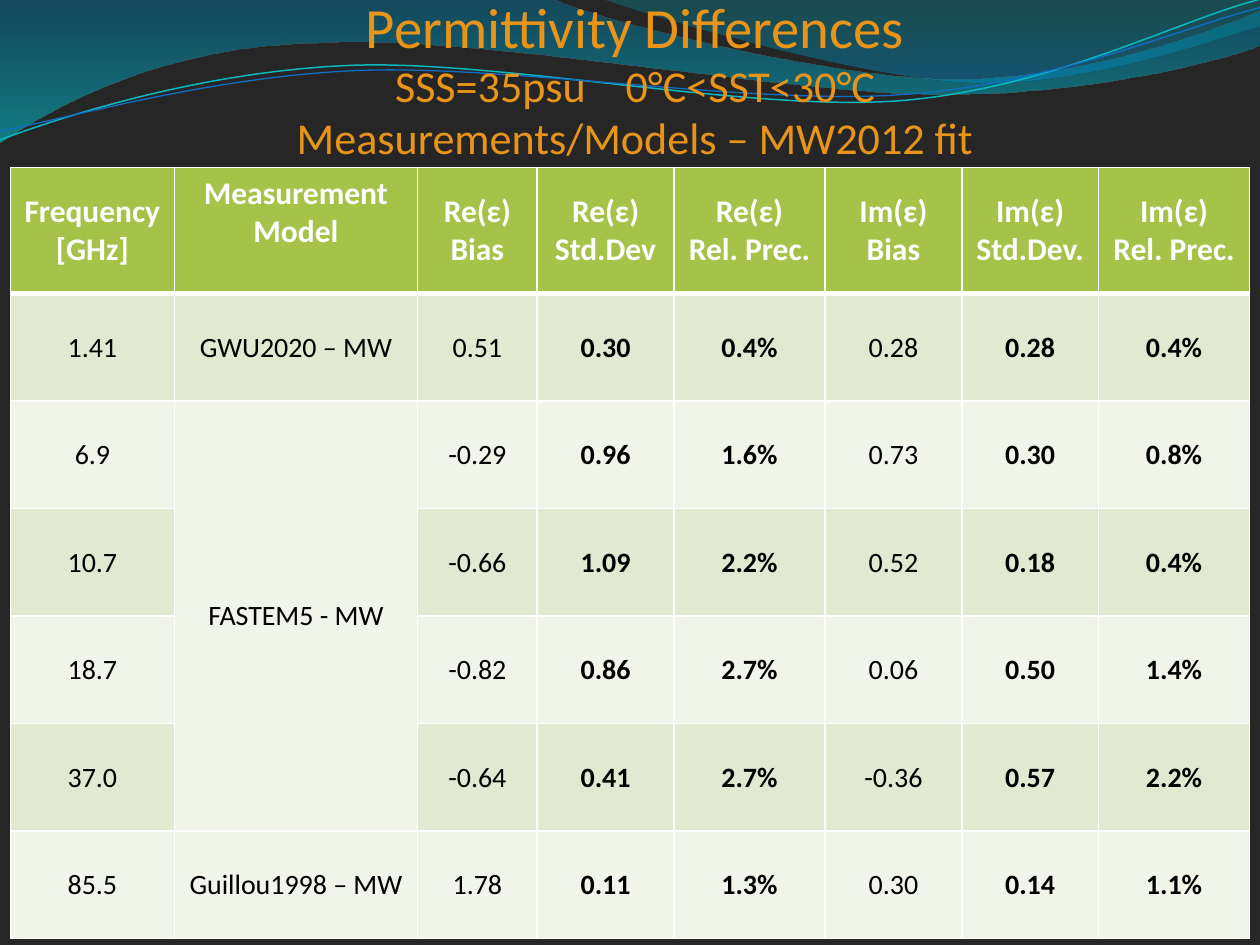
from lxml.etree import SubElement
from pptx import Presentation
from pptx.dml.color import RGBColor
from pptx.enum.text import MSO_ANCHOR, PP_ALIGN
from pptx.oxml.ns import qn
from pptx.util import Pt

# Each segment holds one point for a straight line or three for a cubic curve.
WAVE_FRONT = [
    [(0, 0)], [(316.8, 0)],
    [(342.7, 12.2), (478, 45.4), (545.8, 45.4)],
    [(618, 45.4), (689.8, 18.7), (720, 6.5)],
    [(720, 25.9)],
    [(707.8, 31.7), (626.4, 54.7), (537, 54)],
    [(447.8, 54), (275, 20.2), (185, 24.5)],
    [(92.9, 25.9), (33, 59.8), (0, 81.4)],
]
WAVE_RIGHT = [
    [(345, 0)],
    [(366.5, 8), (491, 44.6), (553.7, 46.8)],
    [(616.3, 49.7), (692, 23), (720, 15)],
    [(720, 0)],
]
TEAL_LINE = [
    [(0, 79.9)],
    [(34.6, 67), (113.8, 41), (199.4, 37.4)],
    [(284.4, 33.8), (427, 64), (513.4, 57.6)],
    [(599.8, 51), (675.4, 10.8), (718.6, 0)],
]
BLUE_LINE = [
    [(0, 74.9)],
    [(33.8, 69), (118, 44), (203.8, 40.3)],
    [(290, 36.7), (430.6, 60.5), (516.2, 54)],
    [(602, 48.2), (677.5, 15), (720, 4.3)],
]

COLUMN_WIDTHS = [93.6, 139, 68.4, 78.1, 86.4, 78.1, 78.1, 86.4]
ROW_HEIGHTS = [72] + [61.44] * 6
BOLD_COLUMNS = {3, 4, 6, 7}
HEADERS = [
    ["Frequency [GHz]"], ["Measurement Model"],
    ["Re(ε)", "Bias"], ["Re(ε)", "Std.Dev"], ["Re(ε)", "Rel. Prec."],
    ["Im(ε)", "Bias"], ["Im(ε)", "Std.Dev."], ["Im(ε)", "Rel. Prec."],
]
ROWS = [
    ["1.41", "GWU2020 – MW", "0.51", "0.30", "0.4%", "0.28", "0.28", "0.4%"],
    ["6.9", "FASTEM5 - MW", "-0.29", "0.96", "1.6%", "0.73", "0.30", "0.8%"],
    ["10.7", "", "-0.66", "1.09", "2.2%", "0.52", "0.18", "0.4%"],
    ["18.7", "", "-0.82", "0.86", "2.7%", "0.06", "0.50", "1.4%"],
    ["37.0", "", "-0.64", "0.41", "2.7%", "-0.36", "0.57", "2.2%"],
    ["85.5", "Guillou1998 – MW", "1.78", "0.11", "1.3%", "0.30", "0.14", "1.1%"],
]


def color(value):
    return RGBColor.from_string(value)


class SlideBuilder:
    font_name = "Calibri"
    title_color = "E79419"
    border_color = "FFFFFF"
    header_fill = "A5C249"
    band_fills = ["E1E9D0", "F0F4E9"]

    def __init__(self, slide):
        self.slide = slide

    def background(self, fill):
        self.slide.background.fill.solid()
        self.slide.background.fill.fore_color.rgb = color(fill)

    def outline(self, segments, close):
        """Build a freeform, then join each group of three points into a curve."""
        points = [(Pt(x), Pt(y)) for segment in segments for x, y in segment]
        builder = self.slide.shapes.build_freeform(*points[0])
        builder.add_line_segments(points[1:], close=close)
        shape = builder.convert_to_shape()
        shape.shadow.inherit = False
        lines = iter(list(shape._element.iter(qn("a:lnTo"))))
        for segment in segments[1:]:
            group = [next(lines) for _ in segment]
            if len(group) == 3:
                outline = group[0].getparent()
                curve = SubElement(outline, qn("a:cubicBezTo"))
                group[0].addprevious(curve)
                for line in group:
                    curve.append(line[0])
                    outline.remove(line)
        return shape

    def wave(self, segments, stops):
        """Draw a closed shape; each stop is position, colour, opacity in percent."""
        shape = self.outline(segments, True)
        shape.line.fill.background()
        shape.fill.gradient()
        shape.fill.gradient_angle = 270
        for stop, (position, value, opacity) in zip(shape.fill.gradient_stops, stops):
            stop.position = position
            stop.color.rgb = color(value)
            for tone in shape._element.spPr.iter(qn("a:srgbClr")):
                if tone.get("val") == value:
                    SubElement(tone, qn("a:alpha"), val=str(opacity * 1000))

    def curve(self, segments, value, width):
        shape = self.outline(segments, False)
        shape.fill.background()
        shape.line.color.rgb = color(value)
        shape.line.width = Pt(width)

    def run(self, para, text, size, value, bold=False):
        span = para.add_run()
        span.text = text
        span.font.name = self.font_name
        span.font.size = Pt(size)
        span.font.bold = bold
        span.font.color.rgb = color(value)
        return span

    def title(self, left, top, width, height):
        box = self.slide.shapes.add_textbox(Pt(left), Pt(top), Pt(width), Pt(height))
        frame = box.text_frame
        frame.word_wrap = True
        frame.vertical_anchor = MSO_ANCHOR.BOTTOM
        frame.margin_left = frame.margin_right = frame.margin_bottom = 0
        para = frame.paragraphs[0]
        para.alignment = PP_ALIGN.CENTER
        para.line_spacing = 0.97
        self.run(para, "Permittivity Differences", 32.4, self.title_color)
        para.add_line_break()
        self.run(para, "SSS=35psu", 25.2, self.title_color)
        gap = self.run(para, " ", 25.2, self.title_color)
        gap._r.get_or_add_rPr().set("spc", "1700")
        self.run(para, "0°C<SST<30°C", 25.2, self.title_color)
        para.add_line_break()
        self.run(para, "Measurements/Models – MW2012 fit", 25.2, self.title_color)

    def border(self, cell, side, width):
        line = SubElement(cell._tc.get_or_add_tcPr(), qn(f"a:ln{side}"), w=str(Pt(width)))
        fill = SubElement(line, qn("a:solidFill"))
        SubElement(fill, qn("a:srgbClr"), val=self.border_color)

    def cell(self, cell, lines, row, column):
        header = row == 0
        thick_side = {0: "B", 1: "T"}.get(row)
        for side in "LRTB":
            self.border(cell, side, 3 if side == thick_side else 1)
        cell.fill.solid()
        cell.fill.fore_color.rgb = color(
            self.header_fill if header else self.band_fills[(row - 1) % 2])
        cell.vertical_anchor = MSO_ANCHOR.MIDDLE
        frame = cell.text_frame
        for index, text in enumerate(lines):
            para = frame.add_paragraph() if index else frame.paragraphs[0]
            para.alignment = PP_ALIGN.CENTER
            if header:
                self.run(para, text, 18, "FFFFFF", True)
            elif text:
                self.run(para, text, 16, "000000", column in BOLD_COLUMNS)

    def table(self, left, top):
        content = [HEADERS] + [[[text] for text in row] for row in ROWS]
        table = self.slide.shapes.add_table(
            len(content), len(COLUMN_WIDTHS), Pt(left), Pt(top),
            Pt(sum(COLUMN_WIDTHS)), Pt(sum(ROW_HEIGHTS))).table
        for column, width in zip(table.columns, COLUMN_WIDTHS):
            column.width = Pt(width)
        for row, height in zip(table.rows, ROW_HEIGHTS):
            row.height = Pt(height)
        for row, values in enumerate(content):
            for column, lines in enumerate(values):
                self.cell(table.cell(row, column), lines, row, column)
        table.cell(0, 1).margin_bottom = Pt(24)
        table.cell(2, 1).merge(table.cell(5, 1))


def main():
    deck = Presentation()
    deck.slide_width, deck.slide_height = Pt(720), Pt(540)
    page = SlideBuilder(deck.slides.add_slide(deck.slide_layouts[6]))
    page.background("262626")
    page.wave(WAVE_FRONT, [(0, "0074A1", 45), (1, "00C6CF", 55)])
    page.wave(WAVE_RIGHT, [(0, "00A1A9", 30), (0.8, "008BBF", 45)])
    page.curve(TEAL_LINE, "0AB8BF", 0.85)
    page.curve(BLUE_LINE, "0F6FC6", 0.75)
    page.title(36, 3.9, 653.8, 90)
    page.table(6, 95.8)
    deck.save("out.pptx")


if __name__ == "__main__":
    main()
